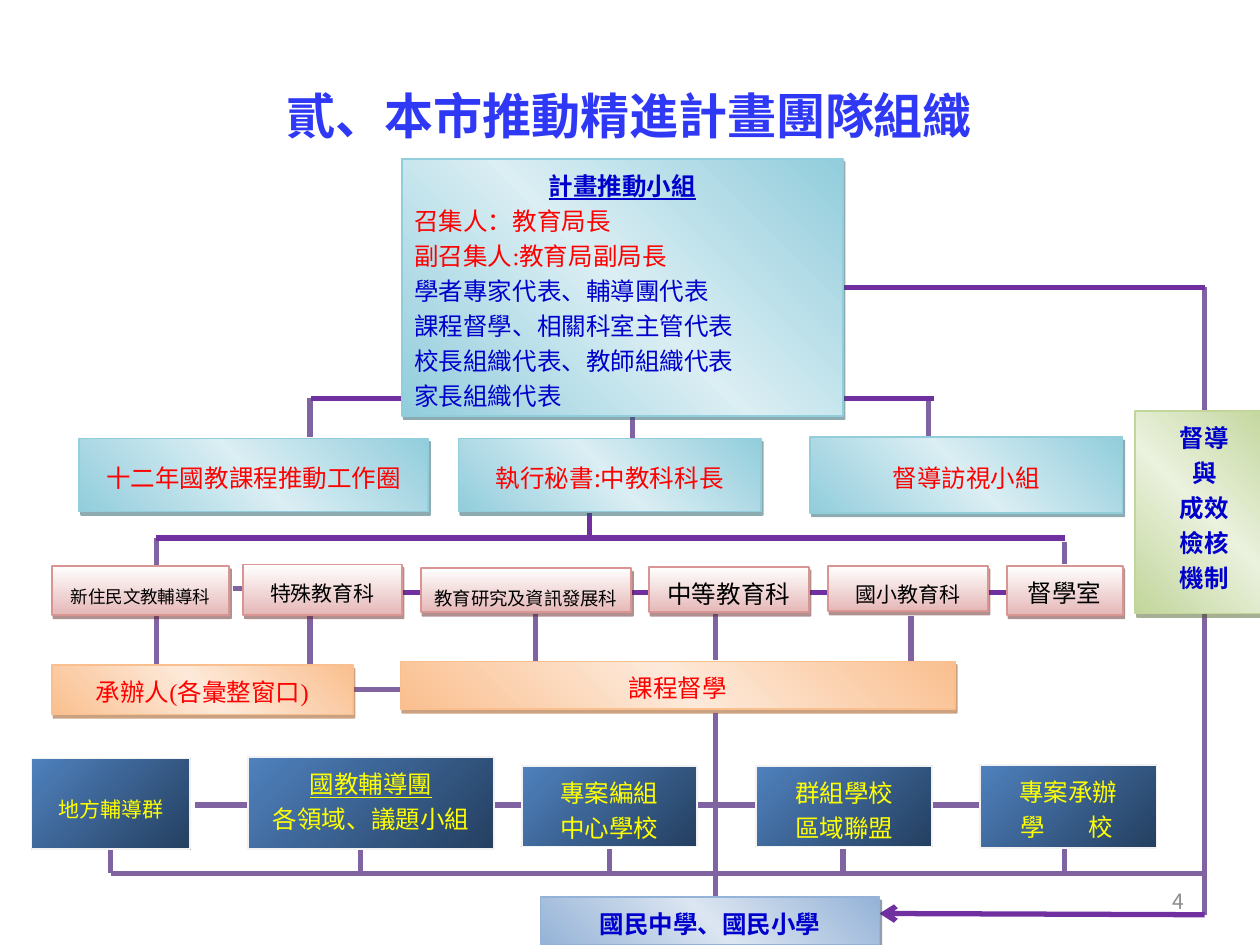
from lxml import etree
from pptx import Presentation, util as u
from pptx.dml.color import RGBColor
from pptx.enum import shapes, text
from pptx.oxml.ns import qn

CJK, SERIF = "Noto Sans CJK SC", "Times New Roman"
RED, NAVY, BLACK, YELLOW = "FF0000", "0000CC", "000000", "FFFF00"
LILAC, PURPLE = "8064A2", "7030A0"
MIDDLE, TOP = text.MSO_ANCHOR.MIDDLE, text.MSO_ANCHOR.TOP
LEFT, CENTER, RIGHT = text.PP_ALIGN.LEFT, text.PP_ALIGN.CENTER, text.PP_ALIGN.RIGHT

# gradient colours, counterclockwise angle, line colour, shadow colour
STYLES = {
    "teal": (("92CDDC", "DAEEF3", "92CDDC"), 45, "92CDDC", "205867"),
    "rose": (("FFFFFF", "E5B8B7"), 270, "D99594", "622423"),
    "green": (("C2D69B", "EAF1DD", "C2D69B"), 45, "C2D69B", "4E6128"),
    "orange": (("FABF8F", "FDE9D9", "FABF8F"), 45, "FABF8F", "974706"),
    "navy": (("4F81BD", "243F60"), 315, "F2F2F2", None),
    "blue": (("95B3D7", "DBE5F1", "95B3D7"), 45, "95B3D7", "243F60"),
}

TEAM_HEADING = dict(bold=True, underline=True)
MEMBER = dict(align=LEFT)
LEADER = dict(align=LEFT, color=RED)

# style, (left, top, width, height), text defaults, anchor, lines
BOXES = [
    ("teal", (3.19, 1.26, 3.5, 2.04), dict(color=NAVY), TOP,
     [("計畫推動小組", TEAM_HEADING), ("召集人：教育局長", LEADER), ("副召集人:教育局副局長", LEADER),
      ("學者專家代表、輔導團代表", MEMBER), ("課程督學、相關科室主管代表", MEMBER),
      ("校長組織代表、教師組織代表", MEMBER), ("家長組織代表", MEMBER)]),
    ("teal", (0.63, 3.48, 2.77, 0.58), dict(color=RED, font=CJK), MIDDLE, ["十二年國教課程推動工作圈"]),
    ("teal", (3.64, 3.48, 2.4, 0.58), dict(color=RED, font=CJK), MIDDLE, ["執行秘書:中教科科長"]),
    ("teal", (6.43, 3.47, 2.48, 0.6), dict(color=RED), MIDDLE, ["督導訪視小組"]),
    ("green", (9.01, 3.26, 1.1, 1.61), dict(color=NAVY, bold=True), TOP,
     ["督導", "與", "成效", "檢核", "機制"]),
    ("rose", (0.41, 4.49, 1.41, 0.39), dict(size=10, font=CJK), TOP, ["新住民文教輔導科"]),
    ("rose", (1.93, 4.48, 1.26, 0.4), dict(size=12), TOP, ["特殊教育科"]),
    ("rose", (3.34, 4.51, 1.67, 0.35), dict(size=10.5), TOP, ["教育研究及資訊發展科"]),
    ("rose", (5.15, 4.5, 1.27, 0.36), {}, TOP, ["中等教育科"]),
    ("rose", (6.57, 4.49, 1.27, 0.36), dict(size=12), TOP, ["國小教育科"]),
    ("rose", (7.99, 4.49, 0.92, 0.39), dict(font=CJK), TOP, ["督學室"]),
    ("orange", (0.41, 5.28, 2.39, 0.39), dict(color=RED), TOP, ["承辦人(各彙整窗口)"]),
    ("orange", (3.18, 5.25, 4.4, 0.38), dict(color=RED), TOP, ["課程督學"]),
    ("navy", (0.25, 6.02, 1.26, 0.72), dict(size=12, color=YELLOW, font=CJK), MIDDLE, ["地方輔導群"]),
    ("navy", (1.97, 6.01, 1.95, 0.73), dict(color=YELLOW), TOP,
     [("國教輔導團", dict(underline=True)), "各領域、議題小組"]),
    ("navy", (4.14, 6.08, 1.39, 0.64), dict(color=YELLOW), TOP, ["專案編組", "中心學校"]),
    ("navy", (6, 6.08, 1.4, 0.64), dict(color=YELLOW), TOP, ["群組學校", "區域聯盟"]),
    ("navy", (7.78, 6.07, 1.4, 0.66), dict(color=YELLOW), TOP,
     ["專案承辦", ("\t學\t校", dict(align=LEFT, tabs=(0.22, 0.76)))]),
    ("blue", (4.29, 7.12, 2.69, 0.38), dict(color=NAVY, bold=True), TOP, ["國民中學、國民小學"]),
]

# x, top, bottom
VERTICALS = [
    (2.46, 3.16, 3.47), (5.02, 3.23, 3.48), (7.37, 3.16, 3.48),
    (1.24, 4.27, 5.28), (8.45, 4.3, 4.48),
    (2.46, 4.88, 5.28), (4.25, 4.87, 5.28), (5.68, 4.87, 5.24), (7.23, 4.89, 5.25),
    (5.68, 5.66, 7.12), (9.56, 2.28, 3.26), (9.56, 4.87, 7.26),
] + [(x, 6.74, 6.93) for x in (0.88, 2.86, 4.84, 6.69, 8.45)]

# colour, y, left, right
HORIZONTALS = [
    (LILAC, 4.67, 1.85, 2.07), (LILAC, 5.47, 2.79, 3.2),
    (LILAC, 6.39, 1.55, 7.78), (LILAC, 6.93, 0.88, 9.56),
    (PURPLE, 2.28, 6.7, 9.56), (PURPLE, 3.16, 2.47, 3.19), (PURPLE, 3.16, 6.69, 7.41),
    (PURPLE, 4.27, 1.24, 8.45),
] + [(PURPLE, 4.7, x, x + 0.22) for x in (3.19, 5, 6.41, 7.84)]


def rgb(value):
    return RGBColor.from_string(value)


def add_line(slide, color, x1, y1, x2, y2, arrow=False):
    line = slide.shapes.add_connector(
        shapes.MSO_CONNECTOR.STRAIGHT, *(u.Inches(v) for v in (x1, y1, x2, y2)))
    line.line.color.rgb = rgb(color)
    line.line.width = u.Pt(3)
    properties = line._element.spPr
    if arrow:
        etree.SubElement(properties.find(qn("a:ln")), qn("a:tailEnd"), type="arrow")
    etree.SubElement(properties, qn("a:effectLst"))


def write(paragraph, words, size=14, color=BLACK, font=SERIF, bold=False,
          underline=False, align=CENTER, spacing=u.Pt(20), tabs=()):
    paragraph.text = words
    paragraph.alignment = align
    if spacing:
        paragraph.line_spacing = spacing
    if tabs:
        tab_list = etree.SubElement(paragraph._p.get_or_add_pPr(), qn("a:tabLst"))
        for position in tabs:
            etree.SubElement(tab_list, qn("a:tab"), pos=str(u.Inches(position)), algn="l")
    style = paragraph.font
    style.size, style.bold, style.underline = u.Pt(size), bold, underline
    style.name = font
    style.color.rgb = rgb(color)
    defaults = paragraph._p.pPr.find(qn("a:defRPr"))
    etree.SubElement(defaults, qn("a:ea"), typeface=CJK)


def set_gradient(shape, colors, angle):
    shape.fill.gradient()
    shape.fill.gradient_angle = angle
    stops = shape._element.spPr.find(qn("a:gradFill")).find(qn("a:gsLst"))
    for stop in list(stops):
        stops.remove(stop)
    for index, color in enumerate(colors):
        position = 100000 * index // (len(colors) - 1)
        stop = etree.SubElement(stops, qn("a:gs"), pos=str(position))
        etree.SubElement(stop, qn("a:srgbClr"), val=color)


def set_shadow(shape, color):
    shape.shadow.inherit = False
    if color:
        effects = shape._element.spPr.find(qn("a:effectLst"))
        shadow = etree.SubElement(effects, qn("a:outerShdw"), dist=str(u.Pt(2.2)),
                                  dir=str(63 * 60000), algn="ctr", rotWithShape="0")
        tint = etree.SubElement(shadow, qn("a:srgbClr"), val=color)
        etree.SubElement(tint, qn("a:alpha"), val="50000")


def add_box(slide, style, place, defaults, anchor, lines):
    colors, angle, outline, shadow = STYLES[style]
    box = slide.shapes.add_shape(shapes.MSO_SHAPE.RECTANGLE, *map(u.Inches, place))
    set_gradient(box, colors, angle)
    box.line.color.rgb = rgb(outline)
    box.line.width = u.Pt(1)
    set_shadow(box, shadow)
    frame = box.text_frame
    frame.word_wrap = True
    frame.vertical_anchor = anchor
    for index, line in enumerate(lines):
        words, changes = (line, {}) if isinstance(line, str) else line
        paragraph = frame.add_paragraph() if index else frame.paragraphs[0]
        write(paragraph, words, **{**defaults, **changes})


def add_label(slide, place, words, **style):
    frame = slide.shapes.add_textbox(*map(u.Inches, place)).text_frame
    frame.word_wrap = True
    frame.vertical_anchor = MIDDLE
    write(frame.paragraphs[0], words, font=CJK, spacing=None, **style)


def main():
    presentation = Presentation()
    presentation.slide_width, presentation.slide_height = u.Inches(10), u.Inches(7.5)
    slide = presentation.slides.add_slide(presentation.slide_layouts[6])
    add_label(slide, (0.23, 0.29, 9.53, 1.25), "貳、本市推動精進計畫團隊組織",
              size=28, color="2F38F5", bold=True)
    add_label(slide, (7.17, 6.95, 2.33, 0.4), "4", size=12, color="8C8C8C", align=RIGHT)
    for x, top, bottom in VERTICALS:
        add_line(slide, LILAC, x, top, x, bottom)
    for color, y, left, right in HORIZONTALS:
        add_line(slide, color, left, y, right, y)
    add_line(slide, PURPLE, 4.68, 4.07, 4.68, 4.27)
    add_line(slide, PURPLE, 9.56, 7.26, 6.98, 7.25, arrow=True)
    for box in BOXES:
        add_box(slide, *box)
    presentation.save("out.pptx")


if __name__ == "__main__":
    main()
